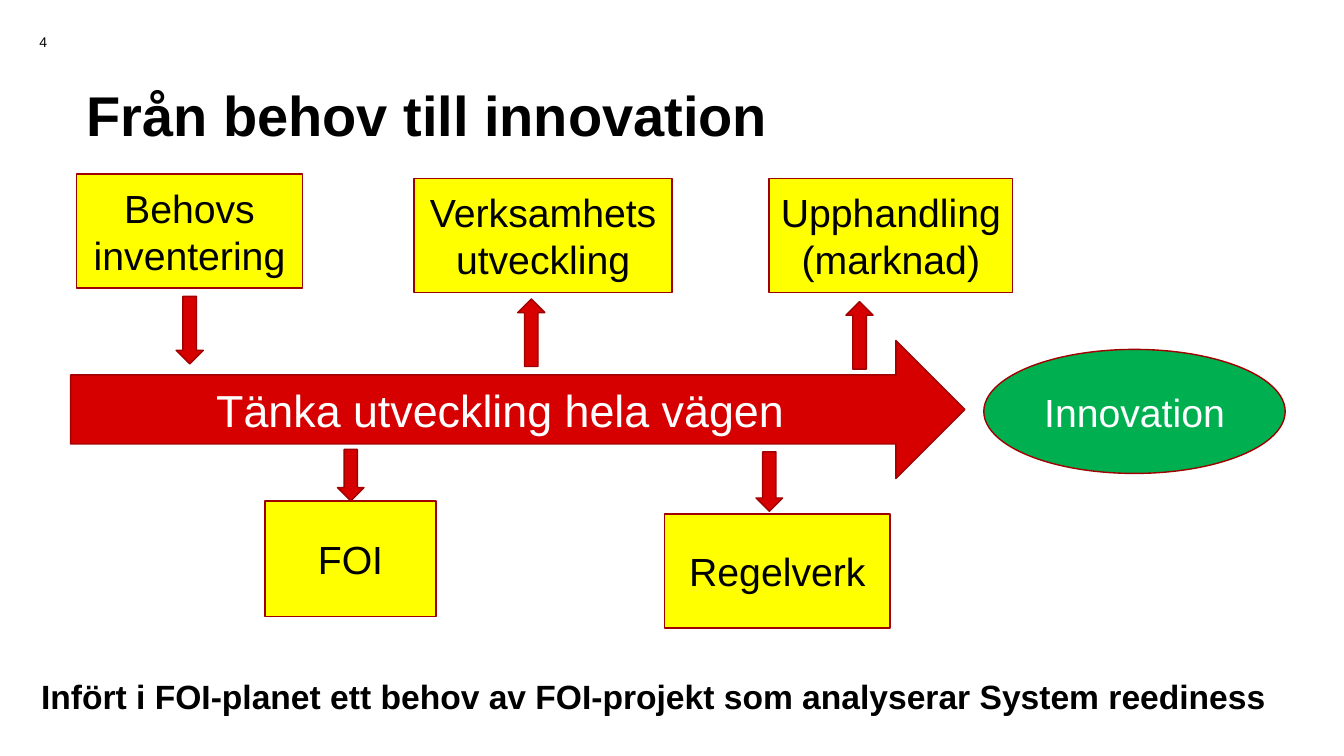
from dataclasses import dataclass

from pptx import Presentation
from pptx.dml.color import RGBColor
from pptx.enum.shapes import MSO_SHAPE as Preset
from pptx.enum.text import MSO_ANCHOR as Anchor, MSO_AUTO_SIZE as AutoSize, PP_ALIGN as Align
from pptx.util import Pt


@dataclass(frozen=True)
class Theme:
    font: str = "Arial"
    black: str = "000000"
    white: str = "FFFFFF"
    red: str = "D70000"
    dark_red: str = "9F0000"
    yellow: str = "FFFF00"
    green: str = "00B050"
    number_size: int = 10
    note_size: int = 24
    box_size: int = 28
    arrow_size: int = 32
    title_size: int = 40


class SlideBuilder:
    def __init__(self, slide, theme):
        self.slide = slide
        self.theme = theme

    def set_text(self, shape, text, size, color, align=Align.CENTER, bold=False, anchor=Anchor.MIDDLE, wrap=True):
        frame = shape.text_frame
        frame.text = text
        frame.word_wrap = wrap
        frame.vertical_anchor = anchor
        for paragraph in frame.paragraphs:
            paragraph.alignment = align
            for run in paragraph.runs:
                run.font.name = self.theme.font
                run.font.size = Pt(size)
                run.font.bold = bold
                run.font.color.rgb = RGBColor.from_string(color)

    def title(self, text, left, top, width, height):
        title = self.slide.shapes.title
        title.left, title.top, title.width, title.height = map(Pt, (left, top, width, height))
        self.set_text(title, text, self.theme.title_size, self.theme.black, Align.LEFT, True)
        title.text_frame.auto_size = AutoSize.NONE
        title.text_frame.paragraphs[0].line_spacing = 0.9

    def label(self, text, left, top, width, height, size, **style):
        label = self.slide.shapes.add_textbox(*map(Pt, (left, top, width, height)))
        self.set_text(label, text, size, self.theme.black, **style)
        return label

    def shape(self, preset, left, top, width, height, fill):
        shape = self.slide.shapes.add_shape(preset, *map(Pt, (left, top, width, height)))
        shape.shadow.inherit = False
        shape.fill.solid()
        shape.fill.fore_color.rgb = RGBColor.from_string(fill)
        shape.line.color.rgb = RGBColor.from_string(self.theme.dark_red)
        shape.line.width = Pt(1)
        return shape

    def box(self, text, left, top, width, height):
        box = self.shape(Preset.RECTANGLE, left, top, width, height, self.theme.yellow)
        self.set_text(box, text, self.theme.box_size, self.theme.black)

    def small_arrow(self, left, top, width, height, rotation):
        arrow = self.shape(Preset.UP_ARROW, left, top, width, height, self.theme.red)
        arrow.rotation = rotation

    def main_arrow(self, text, left, top, width, height):
        arrow = self.shape(Preset.RIGHT_ARROW, left, top, width, height, self.theme.red)
        self.set_text(arrow, text, self.theme.arrow_size, self.theme.white)

    def goal(self, text, left, top, width, height):
        goal = self.shape(Preset.OVAL, left, top, width, height, self.theme.green)
        self.set_text(goal, text, self.theme.box_size, self.theme.white)


def main():
    presentation = Presentation()
    presentation.slide_width, presentation.slide_height = Pt(960), Pt(540)
    theme = Theme()
    builder = SlideBuilder(presentation.slides.add_slide(presentation.slide_layouts[5]), theme)

    builder.title("Från behov till innovation", 54.7, 60.5, 850.3, 47.5)
    builder.label("4", 0, 15.8, 61.9, 28.8, theme.number_size)
    builder.main_arrow("Tänka utveckling hela vägen", 50.4, 243.2, 638.8, 98.6)

    for text, left, top, width, height in (
        ("Behovs inventering", 54.7, 124.4, 161.3, 81.4),
        ("FOI", 189.2, 357.8, 122.4, 82.8),
        ("Verksamhets\vutveckling", 295.8, 127.6, 184.3, 81.4),
        ("Regelverk", 474.6, 367.2, 161.3, 81.4),
        ("Upphandling\v(marknad)", 549.2, 127.6, 174.2, 81.4),
    ):
        builder.box(text, left, top, width, height)

    builder.goal("Innovation", 702.7, 249.6, 215.3, 88.6)

    up, down = 0, 180
    for left, top, width, height, rotation in (
        (125.8, 211.7, 19.4, 48.2, down),
        (369.8, 213.6, 19.4, 48.2, up),
        (604.3, 215.5, 19.4, 48.2, up),
        (241.0, 321.0, 19.0, 36.8, down),
        (540.0, 322.8, 19.0, 42.4, down),
    ):
        builder.small_arrow(left, top, width, height, rotation)

    note = builder.label(
        "Infört i FOI-planet ett behov av FOI-projekt som analyserar System reediness",
        22.3, 479.5, 904.3, 36, theme.note_size,
        align=Align.LEFT, bold=True, anchor=Anchor.TOP, wrap=False,
    )
    note.text_frame.auto_size = AutoSize.SHAPE_TO_FIT_TEXT

    presentation.save("out.pptx")


if __name__ == "__main__":
    main()
